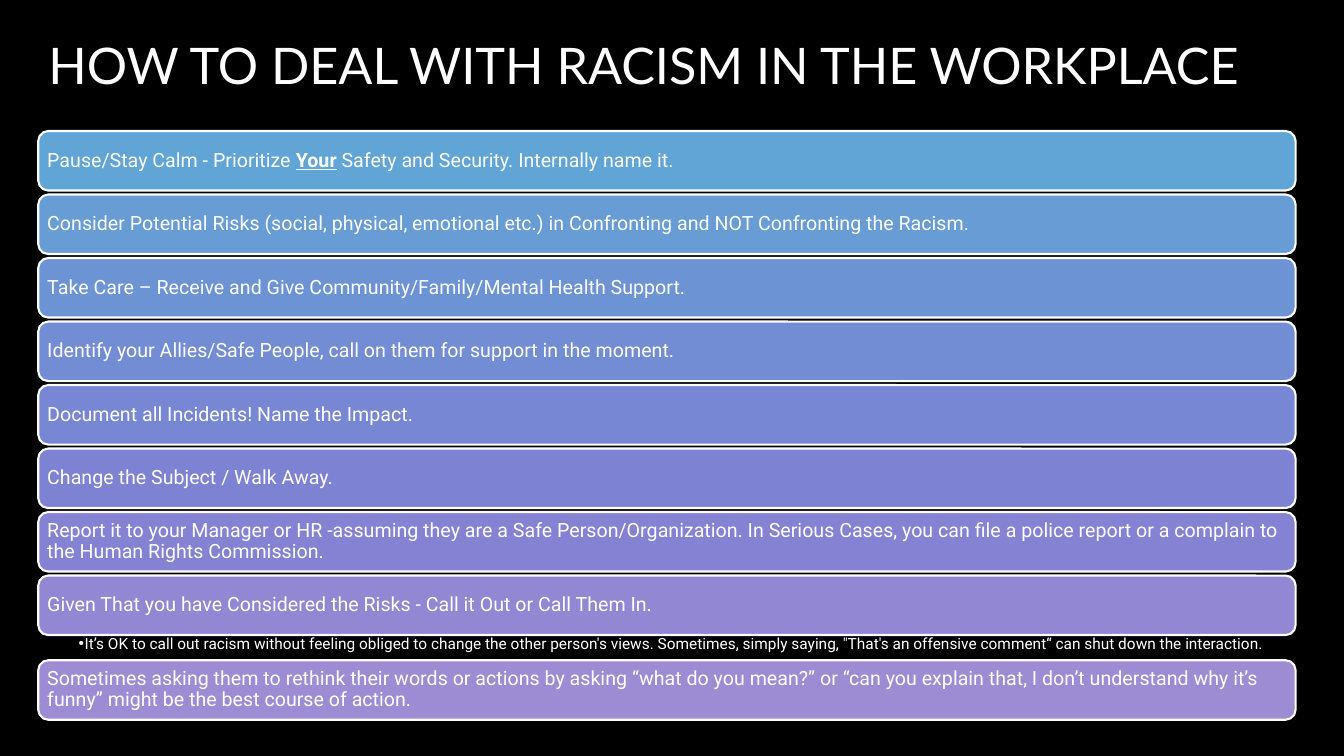
from dataclasses import dataclass

from lxml import etree
from pptx import Presentation
from pptx.dml.color import RGBColor
from pptx.enum.shapes import MSO_SHAPE
from pptx.enum.text import MSO_ANCHOR, MSO_AUTO_SIZE, PP_ALIGN
from pptx.oxml.ns import qn
from pptx.util import Inches, Pt

ROUNDED = MSO_SHAPE.ROUNDED_RECTANGLE
TOP, MIDDLE = MSO_ANCHOR.TOP, MSO_ANCHOR.MIDDLE
LEFT = PP_ALIGN.LEFT
NO_FIT = MSO_AUTO_SIZE.NONE

BLACK, WHITE = "000000", "FFFFFF"
MARGIN, WIDTH = 0.38, 12.47
BAR_TOP, BAR_HEIGHT, BAR_STEP = 1.3, 0.59, 0.63
NOTE_TOP, NOTE_HEIGHT, NOTE_GAP = 6.29, 0.25, 0.21


@dataclass
class Tip:
    color: str
    text: str
    note: str = ""


# Asterisks enclose the emphasised word.
TIPS = [
    Tip("61A5D6", "Pause/Stay Calm - Prioritize *Your* Safety and Security. Internally name it."),
    Tip("679CD5", "Consider Potential Risks (social, physical, emotional etc.) in Confronting "
                  "and NOT Confronting the Racism."),
    Tip("6C94D5", "Take Care – Receive and Give Community/Family/Mental Health Support."),
    Tip("728DD4", "Identify your Allies/Safe People, call on them for support in the moment."),
    Tip("7787D4", "Document all Incidents! Name the Impact."),
    Tip("7D82D3", "Change the Subject / Walk Away."),
    Tip("8582D3", "Report it to your Manager or HR -assuming they are a Safe Person/Organization. "
                  "In Serious Cases, you can file a police report or a complain to the Human "
                  "Rights Commission."),
    Tip("9187D3", "Given That you have Considered the Risks - Call it Out or Call Them In.",
        note="It’s OK to call out racism without feeling obliged to change the other person's "
             "views. Sometimes, simply saying, \"That's an offensive comment“ can shut down "
             "the interaction."),
    Tip("9D8CD3", "Sometimes asking them to rethink their words or actions by asking “what do "
                  "you mean?” or “can you explain that, I don’t understand why it’s funny” "
                  "might be the best course of action."),
]


def rgb(color: str) -> RGBColor:
    return RGBColor.from_string(color)


def place(sp, top: float, height: float) -> None:
    sp.left, sp.top = Inches(MARGIN), Inches(top)
    sp.width, sp.height = Inches(WIDTH), Inches(height)


def write(sp, text: str, *, size: float, font: str = "Roboto", spacing: float = 0.9,
          anchor=TOP, insets: tuple = (0.1, 0.05, 0.1, 0.05), bullet: bool = False) -> None:
    """Fill a shape with one paragraph, emphasising words between asterisks."""
    tf = sp.text_frame
    tf.word_wrap, tf.auto_size, tf.vertical_anchor = True, NO_FIT, anchor
    tf.margin_left, tf.margin_top, tf.margin_right, tf.margin_bottom = map(Inches, insets)
    p = tf.paragraphs[0]
    p.alignment, p.line_spacing, p.space_before = LEFT, spacing, Pt(0)
    if bullet:
        p.level = 1
        pPr = p._p.get_or_add_pPr()
        pPr.set("marL", str(Inches(0.06)))
        pPr.set("indent", str(-Inches(0.06)))
        etree.SubElement(pPr, qn("a:buChar")).set("char", "•")
    for i, part in enumerate(text.split("*")):
        r = p.add_run()
        r.text = part
        r.font.name, r.font.size = font, Pt(size)
        r.font.color.rgb = rgb(WHITE)
        if i % 2:
            r.font.bold = r.font.underline = True


def add_bar(slide, tip: Tip, top: float) -> None:
    sp = slide.shapes.add_shape(ROUNDED, 0, 0, 0, 0)
    place(sp, top, BAR_HEIGHT)
    sp.shadow.inherit = False
    sp.fill.solid()
    sp.fill.fore_color.rgb = rgb(tip.color)
    sp.line.color.rgb = rgb(WHITE)
    sp.line.width = Pt(1.5)
    write(sp, tip.text, size=14, anchor=MIDDLE, insets=(0.06,) * 4)


def main() -> None:
    prs = Presentation()
    prs.slide_width, prs.slide_height = Inches(13.33), Inches(7.5)
    slide = prs.slides.add_slide(prs.slide_layouts[1])
    slide.background.fill.solid()
    slide.background.fill.fore_color.rgb = rgb(BLACK)

    title, body = slide.shapes.title, slide.placeholders[1]
    place(title, 0.29, 0.8)
    write(title, "HOW TO DEAL WITH RACISM IN THE WORKPLACE", size=36, font="Lato", spacing=1.0)

    top = BAR_TOP
    for tip in TIPS:
        add_bar(slide, tip, top)
        top += BAR_STEP
        if tip.note:
            place(body, NOTE_TOP, NOTE_HEIGHT)
            write(body, tip.note, size=11, insets=(0.4, 0.02, 0.11, 0.02), bullet=True)
            top += NOTE_GAP

    prs.save("out.pptx")


if __name__ == "__main__":
    main()
